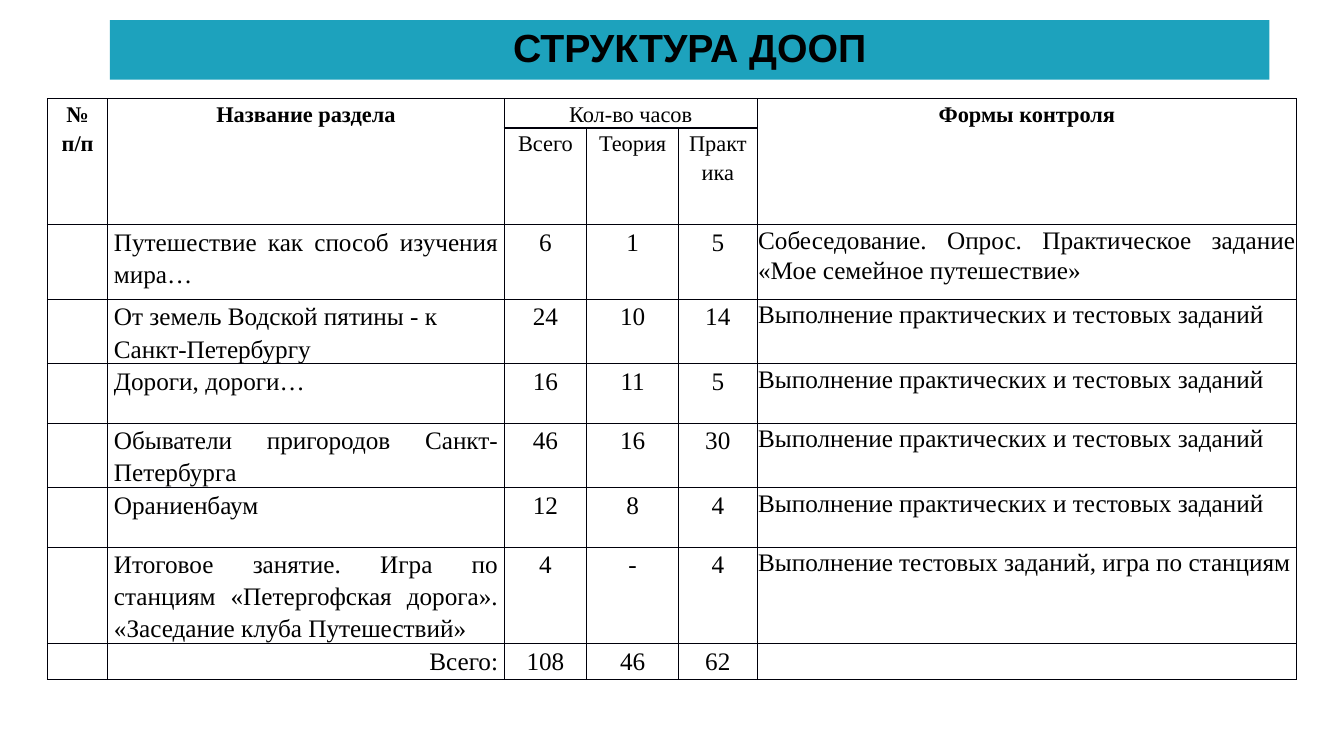
from lxml import etree
from pptx import Presentation, util as u
from pptx.dml.color import RGBColor
from pptx.enum import text
from pptx.oxml import ns

TEAL = RGBColor(0x1D, 0xA2, 0xBD)
BLACK = RGBColor(0, 0, 0)
WHITE = RGBColor(0xFF, 0xFF, 0xFF)
BORDER = RGBColor(0, 0, 0x0A)
LEFT, CENTER, RIGHT, JUSTIFY = (
    text.PP_ALIGN.LEFT, text.PP_ALIGN.CENTER, text.PP_ALIGN.RIGHT, text.PP_ALIGN.JUSTIFY)

TESTS = "Выполнение практических и тестовых заданий"
HEADER = [
    ["№ п/п", "Название раздела", "Кол-во часов", "", "", "Формы контроля"],
    ["", "", "Всего", "Теория", "Практика", ""],
]
SECTIONS = [
    ["", "Путешествие как способ изучения мира…", "6", "1", "5",
     "Собеседование. Опрос. Практическое задание «Мое семейное путешествие»"],
    ["", "От земель Водской пятины - к Санкт-Петербургу", "24", "10", "14", TESTS],
    ["", "Дороги, дороги…", "16", "11", "5", TESTS],
    ["", "Обыватели пригородов Санкт-Петербурга", "46", "16", "30", TESTS],
    ["", "Ораниенбаум", "12", "8", "4", TESTS],
    ["", "Итоговое занятие. Игра по станциям «Петергофская дорога». "
     "«Заседание клуба Путешествий»", "4", "-", "4",
     "Выполнение тестовых заданий, игра по станциям"],
    ["", "Всего:", "108", "46", "62", ""],
]
ROWS = HEADER + SECTIONS
COL_WIDTHS = [0.6, 3.93, 0.82, 0.91, 0.78, 5.35]
ROW_HEIGHTS = [0.29, 0.96, 0.74, 0.64, 0.59, 0.64, 0.59, 0.95, 0.36]
NAME_COL, CONTROL_COL = 1, 5
NAME_ALIGN = {3: LEFT, len(ROWS) - 1: RIGHT}  # other section names are justified


def add_borders(cell):
    tcPr = cell._tc.get_or_add_tcPr()
    for i, side in enumerate(("lnL", "lnR", "lnT", "lnB")):
        ln = etree.Element(ns.qn("a:" + side), w=str(u.Pt(1)))
        fill = etree.SubElement(ln, ns.qn("a:solidFill"))
        etree.SubElement(fill, ns.qn("a:srgbClr"), val=str(BORDER))
        tcPr.insert(i, ln)


def set_text(p, value, font, size, bold, align, spacing):
    p.text = value
    p.alignment, p.line_spacing = align, spacing
    p.font.name, p.font.size, p.font.bold = font, u.Pt(size), bold
    p.font.color.rgb = BLACK


prs = Presentation()
prs.slide_width, prs.slide_height = u.Inches(13.33), u.Inches(7.5)
s = prs.slides.add_slide(prs.slide_layouts[5])

# Title band
title = s.shapes.title
title.left, title.top = u.Inches(1.09), u.Inches(0.2)
title.width, title.height = u.Inches(11.5), u.Inches(0.59)
title.fill.solid()
title.fill.fore_color.rgb = TEAL
tf = title.text_frame
tf.auto_size = text.MSO_AUTO_SIZE.NONE
tf.vertical_anchor = text.MSO_ANCHOR.MIDDLE
set_text(tf.paragraphs[0], "СТРУКТУРА ДООП", "Arial", 28, True, CENTER, 0.9)

# Table grid
frame = s.shapes.add_table(
    len(ROWS), len(COL_WIDTHS), u.Inches(0.47), u.Inches(0.98),
    u.Inches(sum(COL_WIDTHS)), u.Inches(sum(ROW_HEIGHTS)))
table = frame.table
table.first_row = table.horz_banding = False
for column, width in zip(table.columns, COL_WIDTHS):
    column.width = u.Inches(width)
for row, height in zip(table.rows, ROW_HEIGHTS):
    row.height = u.Inches(height)

# Cells
for r, values in enumerate(ROWS):
    is_header = r < len(HEADER)
    for c, value in enumerate(values):
        cell = table.cell(r, c)
        cell.fill.solid()
        cell.fill.fore_color.rgb = WHITE
        add_borders(cell)
        cell.margin_left = cell.margin_right = u.Inches(0.01 if c == CONTROL_COL else 0.06)
        cell.margin_top = cell.margin_bottom = 0
        if not value:
            continue
        align, spacing = CENTER, 1.15
        if not is_header and c == NAME_COL:
            align = NAME_ALIGN.get(r, JUSTIFY)
        elif not is_header and c == CONTROL_COL:
            align, spacing = (JUSTIFY if r < 4 else LEFT), 1.07
        bold = r == 0 and c in (0, NAME_COL, CONTROL_COL)
        set_text(cell.text_frame.paragraphs[0], value, "Times New Roman",
                 16 if is_header else 18, bold, align, spacing)

# Merged headings
for c in (0, NAME_COL, CONTROL_COL):
    table.cell(0, c).merge(table.cell(1, c))
table.cell(0, 2).merge(table.cell(0, 4))

prs.save("out.pptx")
